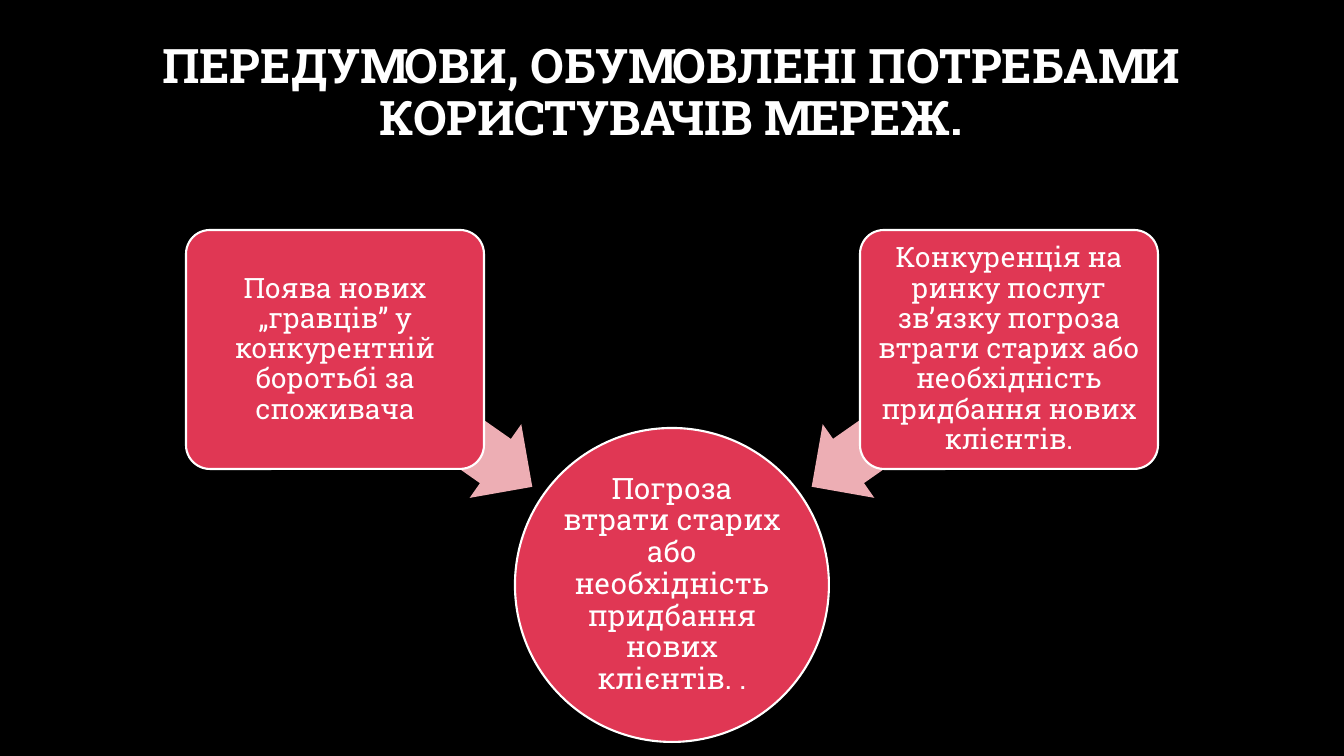
from pptx import Presentation
from pptx.dml.color import RGBColor
from pptx.enum.shapes import MSO_SHAPE as Shape
from pptx.enum.text import MSO_ANCHOR as Anchor, MSO_AUTO_SIZE as AutoSize, PP_ALIGN as Align
from pptx.util import Emu, Pt

TITLE = "ПЕРЕДУМОВИ, ОБУМОВЛЕНІ ПОТРЕБАМИ КОРИСТУВАЧІВ МЕРЕЖ."
THREAT = "Погроза втрати старих або необхідність придбання нових клієнтів. ."
# text, side of the axis, arrow rotation
CAUSES = [
    ("Поява нових „гравців” у конкурентній боротьбі за споживача", -1, 215),
    ("Конкуренція на ринку послуг зв’язку погроза втрати старих або "
     "необхідність придбання нових клієнтів.", 1, 325),
]

FONT = "Roboto Slab"
BLACK = RGBColor(0x00, 0x00, 0x00)
WHITE = RGBColor(0xFF, 0xFF, 0xFF)
RED = RGBColor(0xE0, 0x37, 0x54)
PINK = RGBColor(0xED, 0xAE, 0xB4)

SLIDE_WIDTH, SLIDE_HEIGHT = 1344, 756
AXIS = SLIDE_WIDTH // 2
BOX_OFFSET, BOX_TOP, BOX_WIDTH, BOX_HEIGHT = 337, 230, 298, 239
ARROW_OFFSET, ARROW_TOP, ARROW_WIDTH, ARROW_HEIGHT = 238, 373, 240, 90
CIRCLE_TOP, CIRCLE_SIZE = 428, 314


def px(length):
    return Emu(round(length * 914400 / 100.8))


def write(shape, text, size, bold=False):
    frame = shape.text_frame
    frame.text = text
    frame.word_wrap = True
    frame.auto_size = AutoSize.NONE
    frame.vertical_anchor = Anchor.MIDDLE
    para = frame.paragraphs[0]
    para.alignment = Align.CENTER
    para.line_spacing = 0.9
    font = para.runs[0].font
    font.name, font.size, font.bold = FONT, Pt(size), bold
    font.color.rgb = WHITE


def add_centred(slide, kind, center, top, width, height, fill):
    """Add a filled shape whose horizontal centre is given."""
    shape = slide.shapes.add_shape(
        kind, px(center - width // 2), px(top), px(width), px(height))
    shape.shadow.inherit = False
    shape.fill.solid()
    shape.fill.fore_color.rgb = fill
    shape.line.fill.background()
    return shape


def add_label(shape, text, size, inset):
    """Outline the shape and write its text with equal insets."""
    shape.line.color.rgb = WHITE
    shape.line.width = Pt(1.5)
    frame = shape.text_frame
    frame.margin_left = frame.margin_right = px(inset)
    frame.margin_top = frame.margin_bottom = px(inset)
    write(shape, text, size)


def main():
    deck = Presentation()
    deck.slide_width, deck.slide_height = px(SLIDE_WIDTH), px(SLIDE_HEIGHT)
    slide = deck.slides.add_slide(deck.slide_layouts[5])
    slide.background.fill.solid()
    slide.background.fill.fore_color.rgb = BLACK

    title = slide.shapes.title
    title.left, title.top, title.width, title.height = map(px, (101, 21, 1141, 146))
    write(title, TITLE, 34, bold=True)

    circle = add_centred(slide, Shape.OVAL, AXIS, CIRCLE_TOP,
                         CIRCLE_SIZE, CIRCLE_SIZE, RED)
    add_label(circle, THREAT, 21, 1)

    for text, side, rotation in CAUSES:
        arrow = add_centred(slide, Shape.LEFT_ARROW, AXIS + side * ARROW_OFFSET,
                            ARROW_TOP, ARROW_WIDTH, ARROW_HEIGHT, PINK)
        arrow.adjustments[0], arrow.adjustments[1] = 0.6, 0.5
        arrow.rotation = rotation
        box = add_centred(slide, Shape.ROUNDED_RECTANGLE, AXIS + side * BOX_OFFSET,
                          BOX_TOP, BOX_WIDTH, BOX_HEIGHT, RED)
        box.adjustments[0] = 0.1
        add_label(box, text, 20, 4)

    deck.save("out.pptx")


if __name__ == "__main__":
    main()
